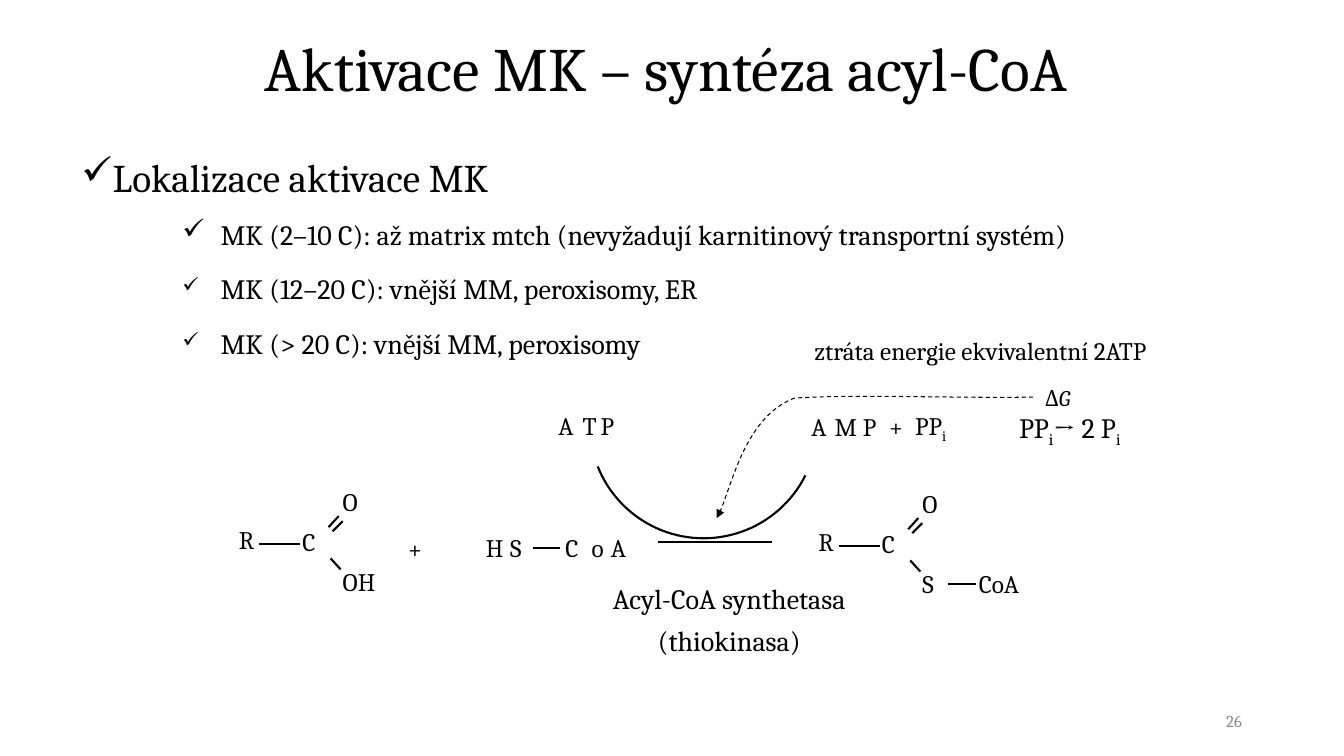
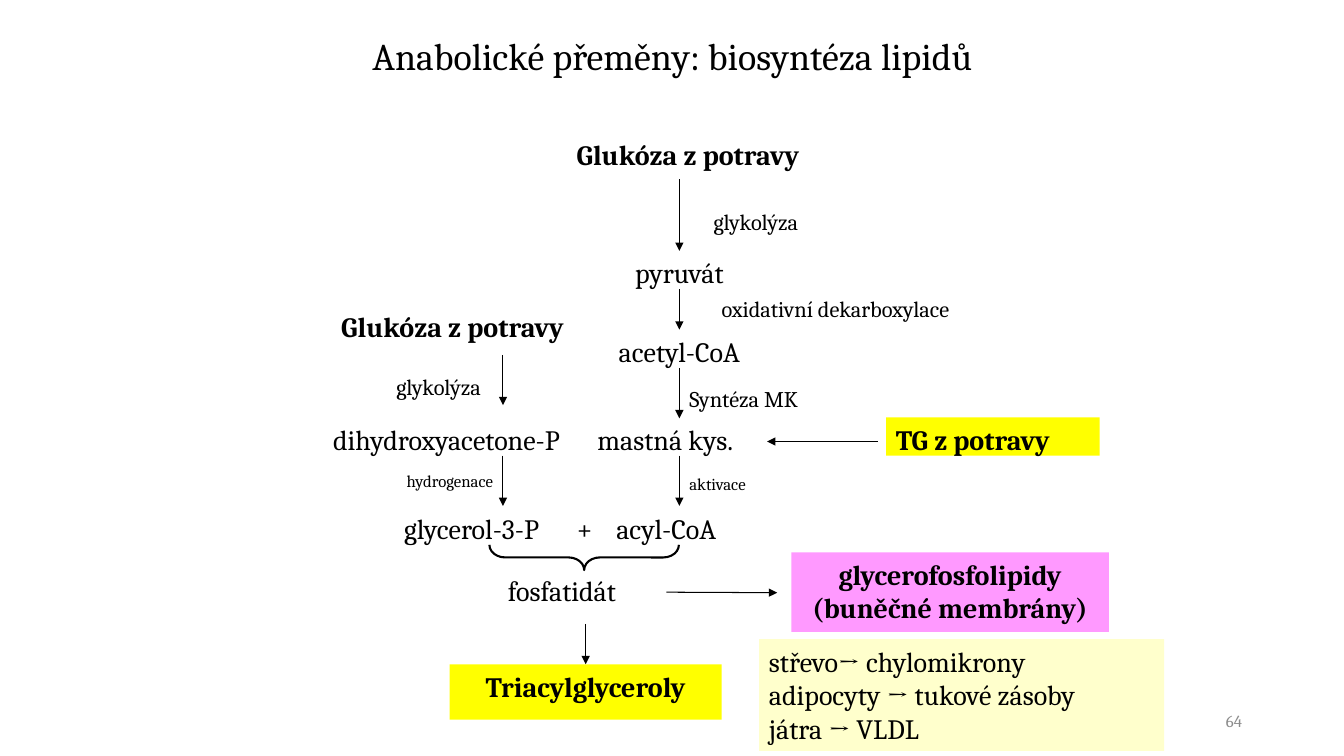
import math

from pptx import Presentation
from pptx import util as u
from pptx.dml.color import RGBColor
from pptx.enum import dml, shapes, text
from pptx.oxml import ns, xmlchemy

CELL = u.Inches(0.1)
COLS, ROWS = 133.33, 75
FONT = "Cambria"
BLACK = RGBColor(0x00, 0x00, 0x00)
GREY = RGBColor(0x8C, 0x8C, 0x8C)
YELLOW = RGBColor(0xFF, 0xFF, 0x00)
PINK = RGBColor(0xFF, 0x99, 0xFF)
CREAM = RGBColor(0xFF, 0xFF, 0xCC)
LEFT, CENTER, RIGHT = text.PP_ALIGN.LEFT, text.PP_ALIGN.CENTER, text.PP_ALIGN.RIGHT
THIN, BOND = 0.75, 1.5


def grid(*cells):
    return [u.Emu(round(c * CELL)) for c in cells]


def child(parent, tag, **attrs):
    el = xmlchemy.OxmlElement(tag)
    for key, value in attrs.items():
        el.set(key, str(value))
    parent.append(el)


def add_runs(p, runs, size, bold=False, color=BLACK):
    for words, style in [(runs, "")] if isinstance(runs, str) else runs:
        r = p.add_run()
        r.text = words
        f = r.font
        f.name, f.size, f.bold = FONT, u.Pt(size), bold
        f.color.rgb = color
        if style == "italic":
            f.italic = True
        if style == "sub":
            r._r.get_or_add_rPr().set("baseline", "-25000")


def fill_text(sp, lines, size, align=LEFT, bold=False, color=BLACK, gap=0, inset=True):
    tf = sp.text_frame
    tf.word_wrap = True
    tf.vertical_anchor = text.MSO_ANCHOR.TOP
    if not inset:
        tf.margin_left = tf.margin_right = tf.margin_top = tf.margin_bottom = 0
    for i, line in enumerate(lines):
        p = tf.add_paragraph() if i else tf.paragraphs[0]
        p.alignment = align
        if i and gap:
            p.space_before = u.Pt(gap)
        add_runs(p, line, size, bold, color)
    return sp


def label(s, box, lines, size=20, **style):
    lines = [lines] if isinstance(lines, str) else lines
    return fill_text(s.shapes.add_textbox(*grid(*box)), lines, size, **style)


def panel(s, box, color, lines, align=CENTER, bold=True):
    sp = s.shapes.add_shape(shapes.MSO_SHAPE.RECTANGLE, *grid(*box))
    sp.shadow.inherit = False
    sp.fill.solid()
    sp.fill.fore_color.rgb = color
    sp.line.fill.background()
    return fill_text(sp, lines, 20, align=align, bold=bold)


def outline(sp, width, arrow=False, dash=False):
    sp.line.color.rgb = BLACK
    sp.line.width = u.Pt(width)
    if dash:
        sp.line.dash_style = dml.MSO_LINE.DASH
    if arrow:
        child(sp.line._get_or_add_ln(), "a:tailEnd", type="triangle")


def line(s, start, end, width=BOND, arrow=False):
    sp = s.shapes.add_connector(shapes.MSO_CONNECTOR.STRAIGHT, *grid(*start, *end))
    outline(sp, width, arrow)
    child(sp._element.find(ns.qn("p:spPr")), "a:effectLst")
    return sp


def arrow(s, start, end, width=THIN, source=None, target=None):
    sp = line(s, start, end, width, True)
    if source:
        sp.begin_connect(*source)
    if target:
        sp.end_connect(*target)


def curve(s, points, width, **ends):
    points = [grid(*pt) for pt in points]
    fb = s.shapes.build_freeform(*points[0])
    fb.add_line_segments(points[1:], close=False)
    sp = fb.convert_to_shape()
    sp.shadow.inherit = False
    sp.fill.background()
    outline(sp, width, **ends)


def bezier(a, b, c, d, steps=24):
    for i in range(steps + 1):
        t = i / steps
        weights = ((1 - t) ** 3, 3 * t * (1 - t) ** 2, 3 * t * t * (1 - t), t ** 3)
        yield tuple(sum(w * pt[k] for w, pt in zip(weights, (a, b, c, d))) for k in (0, 1))


def arc(cx, cy, radius, first, last, steps=48):
    for i in range(steps + 1):
        a = math.radians(first + (last - first) * i / steps)
        yield cx + radius * math.sin(a), cy + radius * math.cos(a)


def atoms(s, y, *items):
    for x, name in items:
        label(s, (x, y, 2.4 * len(name), 3), name, 18, inset=False)


def acyl(s, x, y, tail):
    for dx, dy, name in ((0, 0, "R"), (6.3, 0.2, "C"), (10.3, -3.8, "O"), (10.3, 4.2, tail)):
        atoms(s, y + dy, (x + dx, name))
    for x1, y1, x2, y2 in ((2, 2, 6.1, 2), (9.3, 0.7, 10.3, -0.3),
                           (8.9, 0.3, 9.9, -0.8), (9.1, 3.4, 10.1, 4.5)):
        line(s, (x + x1, y + y1), (x + x2, y + y2))


def checklist(s, box, items):
    tf = s.shapes.add_textbox(*grid(*box)).text_frame
    tf.word_wrap = True
    for i, (words, size, left, hang, before, share) in enumerate(items):
        p = tf.add_paragraph() if i else tf.paragraphs[0]
        pPr = p._p.get_or_add_pPr()
        pPr.set("marL", str(u.Inches(left)))
        pPr.set("indent", str(-u.Inches(hang)))
        child(pPr, "a:buSzPct", val=share * 1000)
        child(pPr, "a:buChar", char="✓")
        p.line_spacing = 1.5
        if before:
            p.space_before = u.Pt(before)
        add_runs(p, words, size)


def new_slide(prs, title, box, size, number, align=LEFT):
    s = prs.slides.add_slide(prs.slide_layouts[6])
    label(s, box, title, size, align=align)
    sp = label(s, (94.2, 69.5, 30, 4), number, 12, align=RIGHT, color=GREY)
    sp.text_frame.vertical_anchor = text.MSO_ANCHOR.MIDDLE
    return s


def activation(prs):
    s = new_slide(prs, "Aktivace MK – syntéza acyl-CoA", (25.3, 2.5, 92.9, 8.4), 44, "26")
    checklist(s, (7.1, 12.4, 112.9, 24.1), [
        ("Lokalizace aktivace MK", 28, 0.31, 0.31, 0, 100),
        ("MK (2–10 C): až matrix mtch (nevyžadují karnitinový transportní systém)",
         20, 1.38, 0.38, 0, 100),
        ("MK (12–20 C): vnější MM, peroxisomy, ER", 20, 1.38, 0.38, 3, 75),
        ("MK (> 20 C): vnější MM, peroxisomy", 20, 1.38, 0.38, 3, 75)])

    acyl(s, 23.7, 52, "OH")
    atoms(s, 52.9, (40.5, "+"))
    atoms(s, 52.8, (48.2, "H"), (50.6, "S"), (56.1, "C"), (58.7, "o"), (60.6, "A"))
    line(s, (52.9, 54.4), (55.6, 54.4))
    line(s, (65.3, 53.75), (76.6, 53.75))
    acyl(s, 81.2, 52.2, "S")
    atoms(s, 56.4, (97.1, "CoA"))
    line(s, (94, 57.9), (96.8, 57.9))

    atoms(s, 40.7, (55.4, "A"), (57.8, "T"), (59.6, "P"))
    atoms(s, 40.8, (80.5, "A"), (82.8, "M"), (85.6, "P"), (88.2, "+"))
    label(s, (90.8, 40.7, 5, 3), [[("PP", ""), ("i", "sub")]], 18, inset=False)
    label(s, (101.1, 40.7, 14, 3.4),
          [[("PP", ""), ("i", "sub"), ("→ 2 P", ""), ("i", "sub")]], inset=False)
    label(s, (102.7, 37.6, 5.5, 3.7), [[("Δ", ""), ("G", "italic")]], 16)
    label(s, (79.8, 32.8, 35.8, 7.1), "ztráta energie ekvivalentní 2ATP", 18)
    label(s, (56.2, 57.2, 32.3, 8.6), ["Acyl-CoA synthetasa", "(thiokinasa)"],
          align=CENTER, gap=6)

    curve(s, arc(69.8, 42.1, 11.3, -68.3, 63.4), BOND)
    bend = (78.8, 39.5)
    energy = [*bezier((102.5, 39.4), (93.3, 39.5), (84.9, 39.1), bend),
              *bezier(bend, (73.5, 41.5), (72.4, 49.4), (71.1, 51.4))]
    curve(s, energy, THIN, arrow=True, dash=True)


def biosynthesis(prs):
    s = new_slide(prs, "Anabolické přeměny: biosyntéza lipidů", (16.7, 2.8, 100, 8.7), 27,
                  "64", CENTER)
    chain, branch = 67.4, 49.9
    for x, y, w in ((53.3, 13.1, 29.9), (31.2, 30.2, 27.4)):
        label(s, (x, y, w, 3.8), "Glukóza z potravy", align=CENTER, bold=True)

    nodes = {}
    for name, cx, y, w in (("pyruvát", chain, 24.9, 17.5), ("acetyl-CoA", chain, 32.7, 17.5),
                           ("dihydroxyacetone-P", 44.3, 41.4, 28),
                           ("mastná kys.", 66, 41.4, 17),
                           ("glycerol-3-P", 46.8, 50.2, 18), ("+", 58, 50.2, 4),
                           ("acyl-CoA", 66.1, 50.2, 14), ("fosfatidát", 55.75, 56.4, 20.7)):
        h = 4.7 if name == "fosfatidát" else 3.8
        nodes[name] = label(s, (cx - w / 2, y, w, h), name, align=CENTER)

    for box, words, size, align in (
            ((69.8, 20.2, 14.8, 3.9), "glykolýza", 16, LEFT),
            ((70.6, 28.8, 28, 3.8), "oxidativní dekarboxylace", 16, LEFT),
            ((67.4, 37.7, 17.1, 3.8), "Syntéza MK", 16, LEFT),
            ((36, 36.5, 12.7, 3.8), "glykolýza", 16, RIGHT),
            ((36, 46.2, 13.9, 4.1), "hydrogenace", 12, RIGHT),
            ((67.4, 46.5, 11.9, 2.8), "aktivace", 12, LEFT)):
        label(s, box, words, size, align=align)

    panel(s, (87.9, 41.4, 21.2, 3.8), YELLOW, ["TG z potravy"], LEFT)
    panel(s, (78.5, 54.8, 31.5, 7.9), PINK, ["glycerofosfolipidy", "(buněčné membrány)"])
    product = panel(s, (44.6, 65.9, 27, 5.5), YELLOW, ["Triacylglyceroly"])
    panel(s, (75.3, 63.4, 40.2, 11.1), CREAM,
          ["střevo→ chylomikrony", "adipocyty → tukové zásoby", "játra → VLDL"], LEFT, False)

    pyruvate, acetyl = nodes["pyruvát"], nodes["acetyl-CoA"]
    arrow(s, (chain, 17.8), (chain, 25.2), target=(pyruvate, 0))
    arrow(s, (chain, 28.8), (chain, 32.7), source=(pyruvate, 2), target=(acetyl, 0))
    arrow(s, (chain, 36.5), (chain, 41.5), source=(acetyl, 2))
    for x, y in ((chain, 45.2), (branch, 35.2), (branch, 45.2)):
        arrow(s, (x, y), (x, y + 5))
    arrow(s, (87.1, 43.8), (76.1, 43.8))
    arrow(s, (65.9, 58.8), (77.1, 58.8), source=(nodes["fosfatidát"], 3))
    arrow(s, (58.1, 61.9), (58.1, 65.9), 1, target=(product, 0))

    brace = s.shapes.add_shape(shapes.MSO_SHAPE.RIGHT_BRACE, *grid(56.7, 45.9, 2.5, 18.8))
    brace.rotation = 90
    brace.adjustments[0], brace.adjustments[1] = 0.62, 0.5
    brace.shadow.inherit = False
    brace.fill.background()
    outline(brace, BOND)


def main():
    prs = Presentation()
    prs.slide_width, prs.slide_height = grid(COLS, ROWS)
    activation(prs)
    biosynthesis(prs)
    prs.save("out.pptx")


if __name__ == "__main__":
    main()
